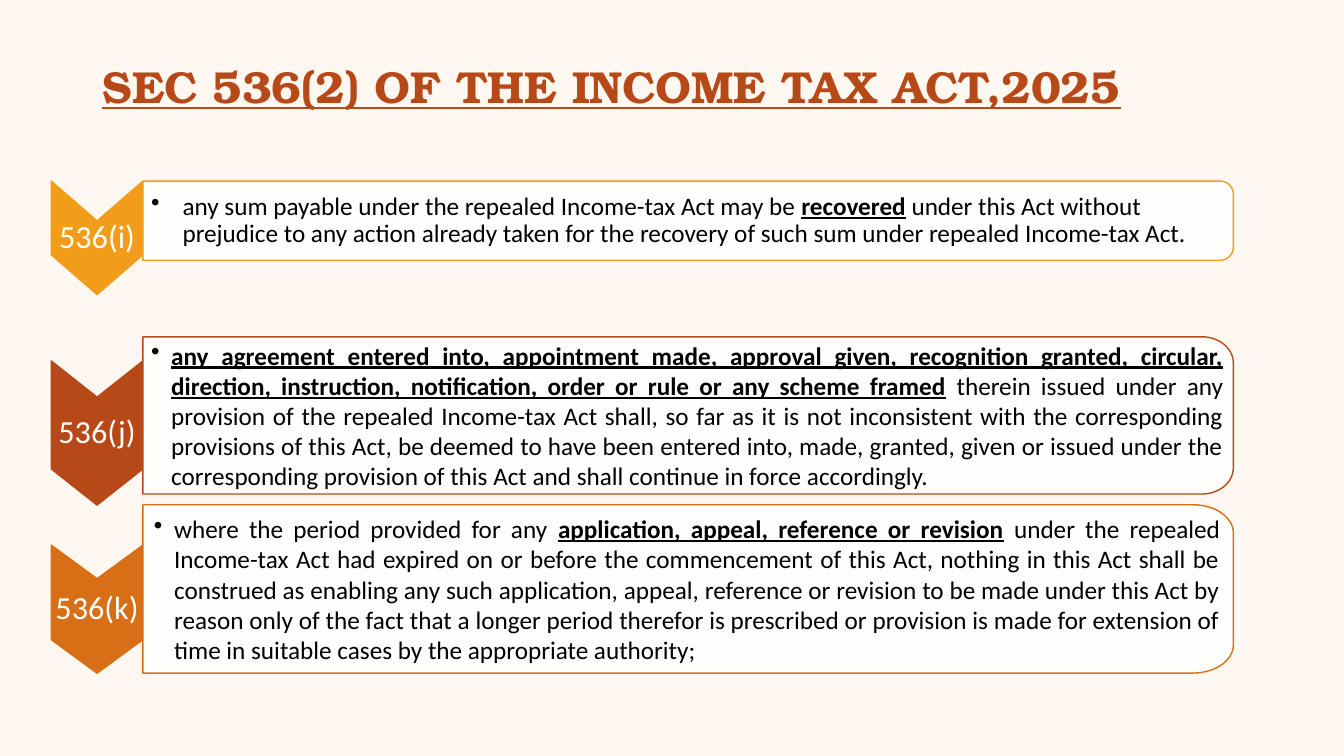
import math
from lxml import etree
from pptx import Presentation
from pptx.dml.color import RGBColor
from pptx.enum import text as t
from pptx.oxml import ns
from pptx.util import Pt

CREAM = RGBColor(0xFE, 0xF8, 0xF0)
WHITE = RGBColor(0xFF, 0xFF, 0xFF)
BLACK = RGBColor(0x00, 0x00, 0x00)
AMBER = RGBColor(0xF1, 0x9D, 0x19)
RUST = RGBColor(0xB7, 0x49, 0x19)
ORANGE = RGBColor(0xD8, 0x6E, 0x15)

CHEVRON_LEFT, PANEL_LEFT, PANEL_RIGHT = 36.6, 102.1, 881
CHEVRON_MIDDLE = (CHEVRON_LEFT + PANEL_LEFT) / 2


def write(box, spans, size, color, font="Calibri", align=t.PP_ALIGN.LEFT,
          spacing=1.0, insets=(7.2, 3.6, 7.2, 3.6), indent=0):
    """Fill a shape with one paragraph of (text, emphasised) spans; an indent adds a bullet."""
    frame = box.text_frame
    frame.word_wrap = True
    frame.auto_size = t.MSO_AUTO_SIZE.NONE
    frame.vertical_anchor = t.MSO_ANCHOR.MIDDLE
    (frame.margin_left, frame.margin_top,
     frame.margin_right, frame.margin_bottom) = map(Pt, insets)
    para = frame.paragraphs[0]
    para.alignment = align
    para.line_spacing = spacing
    if indent:
        props = para._p.get_or_add_pPr()
        props.set("marL", str(Pt(indent)))
        props.set("indent", str(-Pt(indent)))
        etree.SubElement(props, ns.qn("a:buChar")).set("char", "•")
    for words, emphasised in spans:
        span = para.add_run()
        span.text = words
        span.font.name = font
        span.font.size = Pt(size)
        span.font.color.rgb = color
        span.font.bold = span.font.underline = emphasised


def add_outline(page, points, fill, line):
    corners = [(Pt(x), Pt(y)) for x, y in points]
    builder = page.shapes.build_freeform(*corners[0], scale=1.0)
    builder.add_line_segments(corners[1:], close=True)
    shape = builder.convert_to_shape()
    shape.shadow.inherit = False
    shape.fill.solid()
    shape.fill.fore_color.rgb = fill
    shape.line.color.rgb = line
    shape.line.width = Pt(1)
    return shape


deck = Presentation()
deck.slide_width, deck.slide_height = Pt(960), Pt(540)
page = deck.slides.add_slide(deck.slide_layouts[5])
page.background.fill.solid()
page.background.fill.fore_color.rgb = CREAM

title = page.shapes.title
title.left, title.top, title.width, title.height = Pt(66), Pt(11.5), Pt(828), Pt(104.4)
write(title, [("SEC 536(2) OF THE INCOME TAX ACT,2025", True)], 32, RUST,
      font="TeX Gyre Bonum", spacing=0.9)

clauses = [
    dict(label="536(i)", color=AMBER, chevron=(129.4, 81, 28.4),
         panel=(129.4, 56.5, 9.4),
         format=dict(insets=(5.8, 3.6, 3.6, 3.6), indent=22.5, spacing=0.9),
         spans=[("any sum payable under the repealed Income-tax Act may be ", False),
                ("recovered", True),
                (" under this Act without prejudice to any action already taken for the "
                 "recovery of such sum under repealed Income-tax Act.", False)]),
    dict(label="536(j)", color=RUST, chevron=(257.8, 103, 25.9),
         panel=(240.6, 112.3, 22.5),
         format=dict(insets=(5.8, 7.2, 7.2, 7.2), indent=14.4, align=t.PP_ALIGN.JUSTIFY),
         spans=[("any agreement entered into, appointment made, approval given, "
                 "recognition granted, circular, direction, instruction, notification, "
                 "order or rule or any scheme framed", True),
                (" therein issued under any provision of the repealed Income-tax Act shall, "
                 "so far as it is not inconsistent with the corresponding provisions of this "
                 "Act, be deemed to have been entered into, made, granted, given or issued "
                 "under the corresponding provision of this Act and shall continue in force "
                 "accordingly.", False)]),
    dict(label="536(k)", color=ORANGE, chevron=(389.4, 91.5, 24),
         panel=(360.6, 120.2, 28.8),
         format=dict(insets=(7.9, 9.4, 9.4, 9.4), indent=14.4, align=t.PP_ALIGN.JUSTIFY),
         spans=[("where the period provided for any ", False),
                ("application, appeal, reference or revision", True),
                (" under the repealed Income-tax Act had expired on or before the "
                 "commencement of this Act, nothing in this Act shall be construed as "
                 "enabling any such application, appeal, reference or revision to be made "
                 "under this Act by reason only of the fact that a longer period therefor is "
                 "prescribed or provision is made for extension of time in suitable cases by "
                 "the appropriate authority;", False)]),
]

quarter_turn = [math.radians(angle) for angle in range(0, 91, 6)]
for clause in clauses:
    color = clause["color"]
    top, height, notch = clause["chevron"]
    bottom = top + height
    chevron = add_outline(page, [
        (PANEL_LEFT, top), (PANEL_LEFT, bottom - notch), (CHEVRON_MIDDLE, bottom),
        (CHEVRON_LEFT, bottom - notch), (CHEVRON_LEFT, top), (CHEVRON_MIDDLE, top + notch),
    ], color, color)
    write(chevron, [(clause["label"], False)], 23, WHITE, align=t.PP_ALIGN.CENTER,
          spacing=0.9, insets=(1.4, 33.8, 1.4, 33.8))

    top, height, curve_width = clause["panel"]
    bottom, curve_height = top + height, height / 6
    upper_corner = [(PANEL_RIGHT - curve_width * (1 - math.sin(a)),
                     top + curve_height * (1 - math.cos(a))) for a in quarter_turn]
    lower_corner = [(x, top + bottom - y) for x, y in reversed(upper_corner)]
    panel = add_outline(page, [(PANEL_LEFT, top), *upper_corner, *lower_corner,
                               (PANEL_LEFT, bottom)], WHITE, color)
    white_fill = panel._element.spPr.find(".//" + ns.qn("a:srgbClr"))
    etree.SubElement(white_fill, ns.qn("a:alpha")).set("val", "90000")
    write(panel, clause["spans"], 18, BLACK, **clause["format"])

deck.save("out.pptx")
